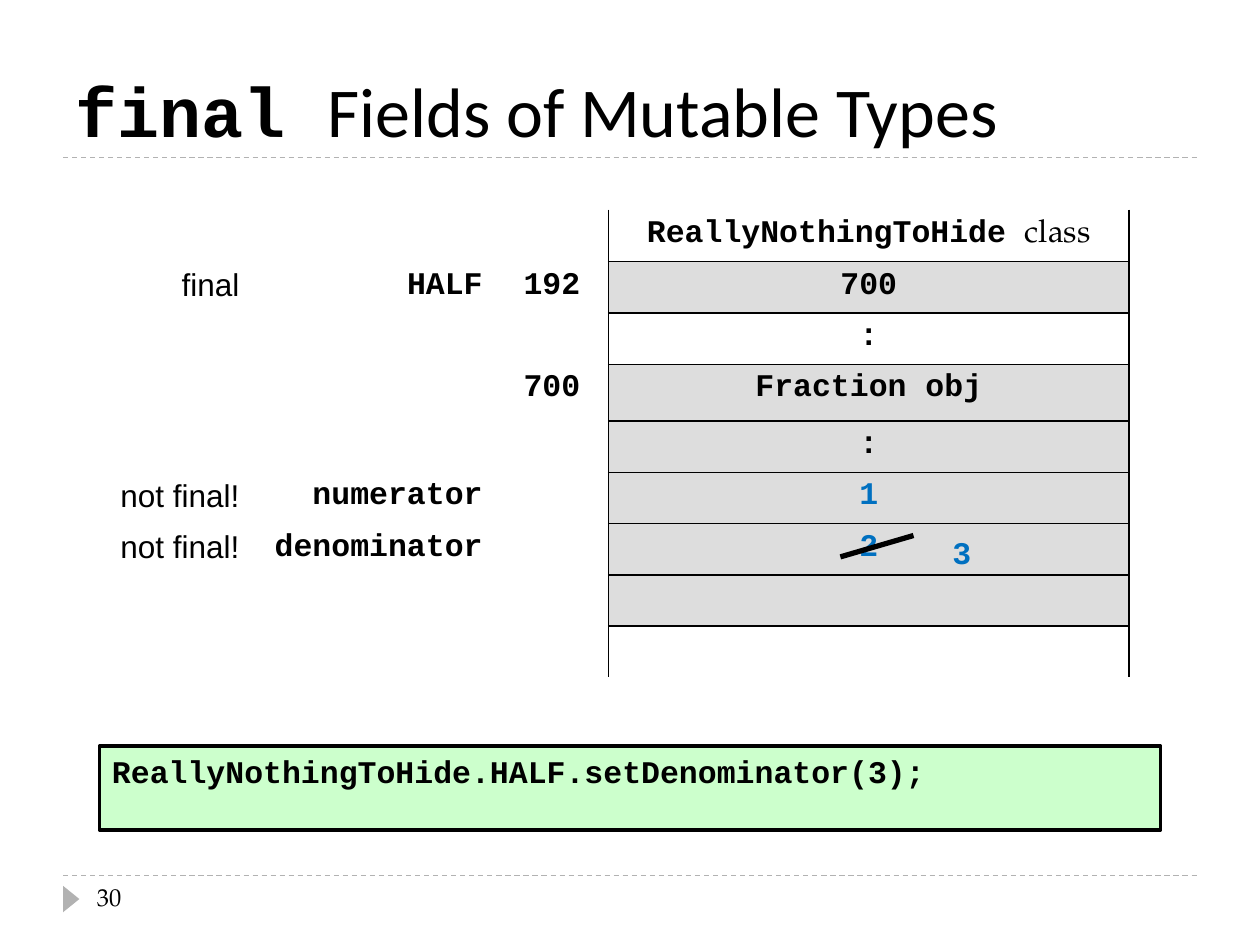
from dataclasses import dataclass

from lxml import etree
from pptx import Presentation
from pptx.dml.color import RGBColor
from pptx.enum.dml import MSO_LINE
from pptx.enum.shapes import MSO_CONNECTOR, MSO_SHAPE
from pptx.enum.text import MSO_ANCHOR, PP_ALIGN
from pptx.oxml.ns import qn
from pptx.util import Inches, Pt

LEFT, CENTER, RIGHT = PP_ALIGN.LEFT, PP_ALIGN.CENTER, PP_ALIGN.RIGHT
TOP, BOTTOM = MSO_ANCHOR.TOP, MSO_ANCHOR.BOTTOM
DASH = MSO_LINE.DASH
STRAIGHT = MSO_CONNECTOR.STRAIGHT
RECTANGLE, TRIANGLE = MSO_SHAPE.RECTANGLE, MSO_SHAPE.ISOSCELES_TRIANGLE

CODE, SANS, HEADING, SERIF = "Courier New", "Arial", "Calibri", "TeX Gyre Pagella"
BLACK, WHITE, GRAY, SILVER = "000000", "FFFFFF", "DDDDDD", "B2B2B2"
BLUE, GREEN = "0070C0", "CCFFCC"

PAGE_WIDTH, PAGE_HEIGHT = Inches(10), Inches(7.5)
COLUMN_SHARES = (12.1, 19.3, 9, 41.3)
ROW_SHARE, OBJECT_ROW_SHARE = 5.43, 6
OBJECT_ROW = 3


@dataclass
class MemoryRow:
    note: str = ""
    field: str = ""
    address: str = ""
    value: str = ""
    color: str = BLACK
    fill: str = GRAY
    edges: str = "LRTB"


@dataclass
class Rule:
    start: tuple[float, float]
    end: tuple[float, float]
    color: str = SILVER
    width: float = 0.75
    dashed: bool = True


MEMORY = [
    MemoryRow(fill=WHITE, edges="LRB"),
    MemoryRow("final", "HALF", "192", "700"),
    MemoryRow(value=":", fill=WHITE),
    MemoryRow(address="700", value="Fraction obj"),
    MemoryRow(value=":"),
    MemoryRow("not final!", "numerator", value="1", color=BLUE),
    MemoryRow("not final!", "denominator", value="2", color=BLUE),
    MemoryRow(),
    MemoryRow(fill=WHITE, edges="LRT"),
]
PAGE_RULES = [Rule((5, 92.67), (95, 92.67)), Rule((5, 16.67), (95, 16.67))]
STRIKE = Rule((66.7, 58.93), (72.5, 56.67), BLACK, 3, False)


def across(percent: float) -> int:
    return round(PAGE_WIDTH * percent / 100)


def down(percent: float) -> int:
    return round(PAGE_HEIGHT * percent / 100)


def area(left: float, top: float, width: float, height: float) -> tuple:
    return across(left), down(top), across(width), down(height)


def rgb(color: str) -> RGBColor:
    return RGBColor.from_string(color)


def write(frame, text: str, *, font: str = CODE, size: float = 18,
          color: str = BLACK, bold: bool = True, align=LEFT) -> None:
    para = frame.paragraphs[0]
    para.alignment = align
    span = para.add_run()
    span.text = text
    span.font.name, span.font.size, span.font.bold = font, Pt(size), bold
    span.font.color.rgb = rgb(color)


def add_label(page, box: tuple, text: str, wrap: bool = False, **style) -> None:
    frame = page.shapes.add_textbox(*area(*box)).text_frame
    frame.word_wrap = wrap
    write(frame, text, **style)


def add_rule(page, rule: Rule) -> None:
    (left, top), (right, bottom) = rule.start, rule.end
    line = page.shapes.add_connector(
        STRAIGHT, across(left), down(top), across(right), down(bottom))
    line.line.color.rgb = rgb(rule.color)
    line.line.width = Pt(rule.width)
    if rule.dashed:
        line.line.dash_style = DASH
    etree.SubElement(line._element.spPr, qn("a:effectLst"))


def add_block(page, kind, box: tuple, fill: str):
    block = page.shapes.add_shape(kind, *area(*box))
    block.shadow.inherit = False
    block.fill.solid()
    block.fill.fore_color.rgb = rgb(fill)
    block.line.fill.background()
    return block


def style_cell(cell, fill: str, edges: str) -> None:
    properties = cell._tc.get_or_add_tcPr()
    for edge in edges:
        border = etree.SubElement(properties, qn(f"a:ln{edge}"), w=str(Pt(1)))
        paint = etree.SubElement(border, qn("a:solidFill"))
        etree.SubElement(paint, qn("a:srgbClr"), val=BLACK)
    cell.fill.solid()
    cell.fill.fore_color.rgb = rgb(fill)


def add_memory_table(page) -> None:
    heights = [ROW_SHARE] * len(MEMORY)
    heights[OBJECT_ROW] = OBJECT_ROW_SHARE
    box = area(7.9, 22.27, sum(COLUMN_SHARES), sum(heights))
    table = page.shapes.add_table(len(MEMORY), len(COLUMN_SHARES), *box).table
    table.first_row = table.horz_banding = False
    for column, share in zip(table.columns, COLUMN_SHARES):
        column.width = across(share)
    for row, share in zip(table.rows, heights):
        row.height = down(share)
    for index, memory in enumerate(MEMORY):
        entries = [
            (memory.note, WHITE, "", dict(font=SANS, bold=False, align=RIGHT)),
            (memory.field, WHITE, "", dict(align=RIGHT)),
            (memory.address, WHITE, "R", dict(align=CENTER)),
            (memory.value, memory.fill, memory.edges,
             dict(color=memory.color, align=CENTER)),
        ]
        for column, (text, fill, edges, style) in enumerate(entries):
            cell = table.cell(index, column)
            style_cell(cell, fill, edges)
            if text:
                write(cell.text_frame, text, **style)
    header = table.cell(0, len(COLUMN_SHARES) - 1).text_frame
    write(header, "ReallyNothingToHide ", align=CENTER)
    write(header, "class", font=SERIF, bold=False, align=CENTER)


def add_title(page) -> None:
    title = page.shapes.title
    title.left, title.top, title.width, title.height = area(5, 3.33, 90, 13.33)
    frame = title.text_frame
    frame.vertical_anchor = BOTTOM
    write(frame, "final ", size=40)
    write(frame, "Fields of Mutable Types", font=HEADING, size=40, bold=False)


def add_code_box(page) -> None:
    box = add_block(page, RECTANGLE, (7.9, 78.93, 84.2, 8.93), GREEN)
    box.line.color.rgb = rgb(BLACK)
    box.line.width = Pt(2)
    box.text_frame.word_wrap = False
    box.text_frame.vertical_anchor = TOP
    write(box.text_frame, "ReallyNothingToHide.HALF.setDenominator(3);")


def main() -> None:
    deck = Presentation()
    deck.slide_width, deck.slide_height = PAGE_WIDTH, PAGE_HEIGHT
    page = deck.slides.add_slide(deck.slide_layouts[5])
    for rule in PAGE_RULES:
        add_rule(page, rule)
    add_block(page, TRIANGLE, (4.6, 94.27, 2.1, 1.73), SILVER).rotation = 90
    add_title(page)
    add_label(page, (6.7, 92.67, 21.7, 5.33), "30", wrap=True,
              font=SERIF, size=14, bold=False)
    add_memory_table(page)
    add_code_box(page)
    add_label(page, (74.6, 55.73, 3.5, 5.33), "3", color=BLUE)
    add_rule(page, STRIKE)
    deck.save("out.pptx")


if __name__ == "__main__":
    main()
